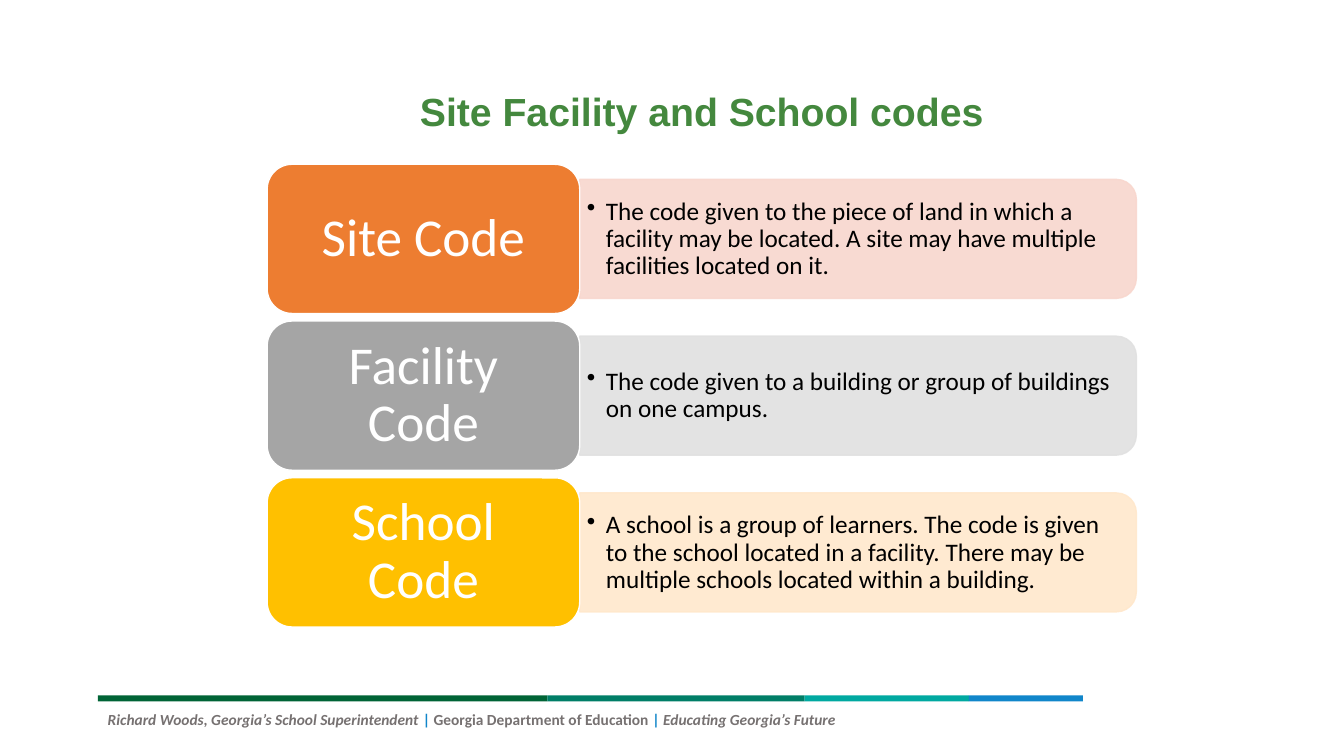
from lxml import etree
from pptx import Presentation
from pptx.dml.color import RGBColor
from pptx.enum.shapes import MSO_SHAPE
from pptx.enum.text import MSO_ANCHOR, PP_ALIGN
from pptx.oxml.ns import qn
from pptx.util import Inches, Pt

RECTANGLE = MSO_SHAPE.RECTANGLE
ROUNDED = MSO_SHAPE.ROUNDED_RECTANGLE
ROUNDED_TOP = MSO_SHAPE.ROUND_2_SAME_RECTANGLE
MIDDLE = MSO_ANCHOR.MIDDLE
CENTER = PP_ALIGN.CENTER
LEFT = PP_ALIGN.LEFT

WHITE = RGBColor(0xFF, 0xFF, 0xFF)
BLACK = RGBColor(0x00, 0x00, 0x00)
TITLE_GREEN = RGBColor(0x44, 0x88, 0x3E)
DARK_GREEN = RGBColor(0x00, 0x64, 0x36)
GREEN = RGBColor(0x00, 0x7E, 0x67)
TEAL = RGBColor(0x00, 0xA9, 0xA1)
BLUE = RGBColor(0x11, 0x86, 0xCA)
FOOTER_GRAY = RGBColor(0x76, 0x71, 0x71)
ORANGE = RGBColor(0xED, 0x7D, 0x31)
PALE_ORANGE = RGBColor(0xF8, 0xD7, 0xCE)
GRAY = RGBColor(0xA5, 0xA5, 0xA5)
PALE_GRAY = RGBColor(0xE1, 0xE1, 0xE1)
GOLD = RGBColor(0xFF, 0xC0, 0x00)
PALE_GOLD = RGBColor(0xFF, 0xE8, 0xCC)

CODES = [
    ("Site Code", ORANGE, PALE_ORANGE,
     "The code given to the piece of land in which a facility may be located. "
     "A site may have multiple facilities located on it."),
    ("Facility Code", GRAY, PALE_GRAY,
     "The code given to a building or group of buildings on one campus."),
    ("School Code", GOLD, PALE_GOLD,
     "A school is a group of learners. The code is given to the school located "
     "in a facility. There may be multiple schools located within a building."),
]
ROW_TOP, ROW_PITCH, ROW_HEIGHT = 1.63, 1.555, 1.48
LABEL_LEFT, LABEL_WIDTH = 2.65, 3.1
PANEL_LEFT, PANEL_WIDTH, PANEL_HEIGHT = 5.75, 5.52, 1.18


def add_filled(kind, left, top, width, height, fill, line=None):
    shape = page.shapes.add_shape(
        kind, Inches(left), Inches(top), Inches(width), Inches(height))
    shape.shadow.inherit = False
    shape.fill.solid()
    shape.fill.fore_color.rgb = fill
    if line is None:
        shape.line.fill.background()
    else:
        shape.line.color.rgb = line
        shape.line.width = Pt(1)
    return shape


def write(frame, text, font_name, size, color, align):
    frame.word_wrap = True
    frame.vertical_anchor = MIDDLE
    para = frame.paragraphs[0]
    para.text = text
    para.alignment = align
    para.line_spacing = 0.9
    para.font.name = font_name
    para.font.size = Pt(size)
    para.font.color.rgb = color
    return para


deck = Presentation()
deck.slide_width = Inches(13.33)
deck.slide_height = Inches(7.5)
page = deck.slides.add_slide(deck.slide_layouts[5])

title = page.shapes.title
title.left, title.top = Inches(2.65), Inches(0.86)
title.width, title.height = Inches(8.62), Inches(0.53)
write(title.text_frame, "Site Facility and School codes",
      "Arial", 28, TITLE_GREEN, CENTER).font.bold = True

band_left = 0.97
for band_width, color in [(4.46, DARK_GREEN), (2.55, GREEN), (1.63, TEAL), (1.13, BLUE)]:
    add_filled(RECTANGLE, band_left, 6.9, band_width, 0.06, color)
    band_left += band_width

footer = page.shapes.add_textbox(Inches(0.97), Inches(7), Inches(12.3), Inches(0.47))
footer.text_frame.word_wrap = True
para = footer.text_frame.paragraphs[0]
para.font.name = "Calibri"
para.font.size = Pt(11)
para.font.bold = True
for text, color, italic in [
    ("Richard Woods, Georgia’s School Superintendent ", FOOTER_GRAY, True),
    ("|", BLUE, False),
    (" Georgia Department of Education ", FOOTER_GRAY, False),
    ("| ", BLUE, False),
    ("Educating Georgia’s Future", FOOTER_GRAY, True),
]:
    span = para.add_run()
    span.text = text
    span.font.color.rgb = color
    span.font.italic = italic

for row, (name, color, pale, description) in enumerate(CODES):
    top = ROW_TOP + row * ROW_PITCH
    middle = top + ROW_HEIGHT / 2

    panel = add_filled(
        ROUNDED_TOP, PANEL_LEFT + (PANEL_WIDTH - PANEL_HEIGHT) / 2,
        middle - PANEL_WIDTH / 2, PANEL_HEIGHT, PANEL_WIDTH, pale, pale)
    panel.rotation = 90
    for tint in panel.fill._xPr.iter(qn("a:srgbClr")):
        etree.SubElement(tint, qn("a:alpha"), val="90000")

    box = page.shapes.add_textbox(
        Inches(PANEL_LEFT), Inches(middle - 0.53), Inches(5.46), Inches(1.07))
    frame = box.text_frame
    frame.margin_left = frame.margin_right = Inches(0.07)
    frame.margin_top = frame.margin_bottom = Inches(0.04)
    properties = frame.paragraphs[0]._p.get_or_add_pPr()
    properties.set("marL", str(Inches(0.19)))
    properties.set("indent", str(-Inches(0.19)))
    etree.SubElement(properties, qn("a:buChar"), char="•")
    write(frame, description, "Calibri", 18, BLACK, LEFT)

    label = add_filled(ROUNDED, LABEL_LEFT, top, LABEL_WIDTH, ROW_HEIGHT, color, WHITE)
    frame = label.text_frame
    frame.margin_left = frame.margin_right = Inches(0.16)
    frame.margin_top = frame.margin_bottom = Inches(0.08)
    write(frame, name, "Calibri", 38, WHITE, CENTER)

deck.save("out.pptx")
